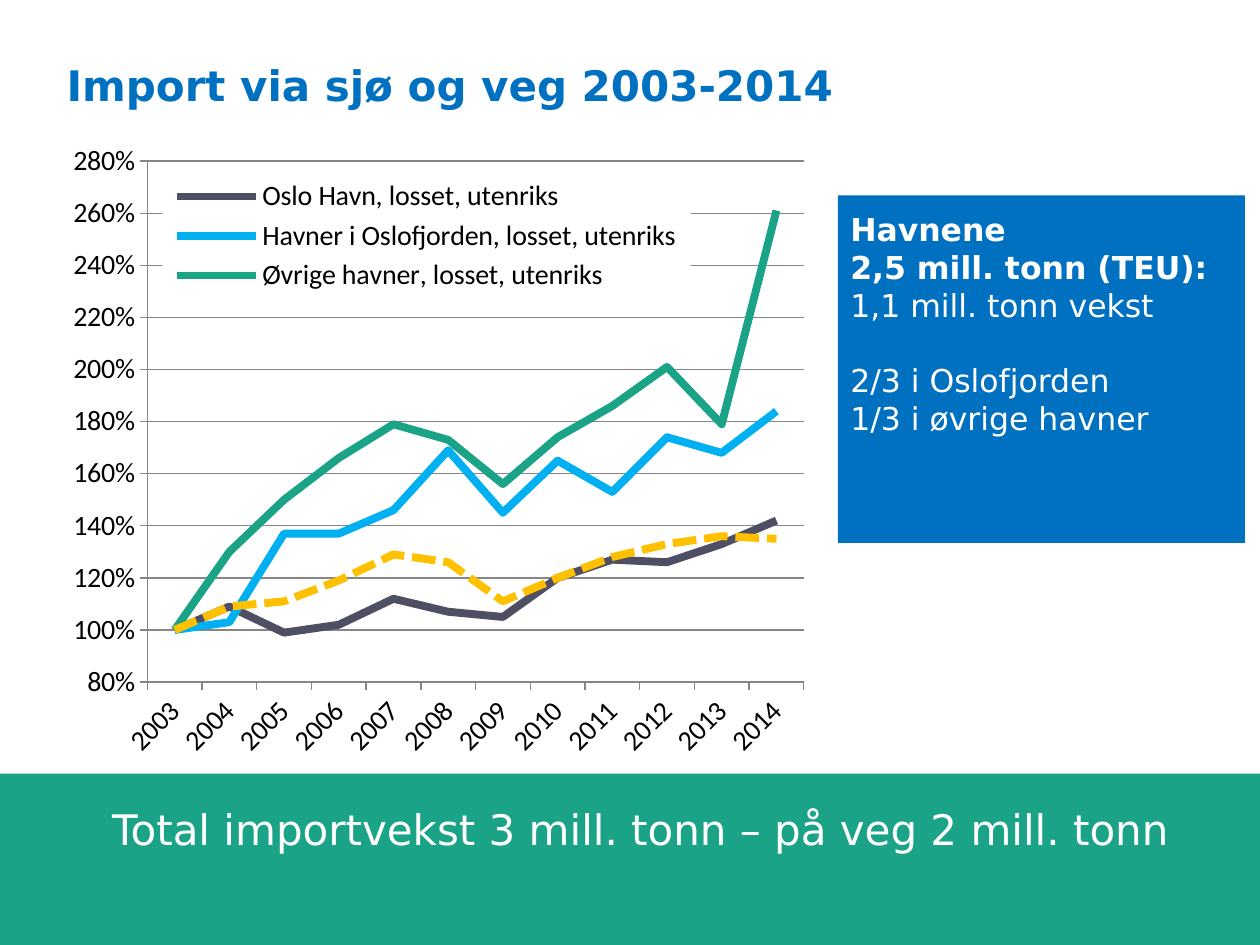
"""Build the slide on imports by sea and road, 2003-2014."""
from pptx import Presentation
from pptx.chart.data import CategoryChartData
from pptx.dml.color import RGBColor
from pptx.enum.chart import XL_CHART_TYPE as ChartType, XL_LEGEND_POSITION as LegendPos
from pptx.enum.chart import XL_MARKER_STYLE as Marker, XL_TICK_MARK as Tick
from pptx.enum.dml import MSO_LINE_DASH_STYLE as Dash
from pptx.enum.shapes import MSO_SHAPE as Shape
from pptx.enum.text import MSO_ANCHOR as Anchor, PP_ALIGN as Align
from pptx.oxml import parse_xml
from pptx.oxml.ns import nsdecls, qn
from pptx.util import Inches, Pt

BLUE = RGBColor(0x00, 0x70, 0xC0)
GREEN = RGBColor(0x1B, 0xA3, 0x87)
SLATE = RGBColor(0x4F, 0x4F, 0x63)
SKY = RGBColor(0x00, 0xB0, 0xF0)
AMBER = RGBColor(0xFF, 0xC0, 0x00)
GREY = RGBColor(0x86, 0x86, 0x86)
BLACK = RGBColor(0, 0, 0)
WHITE = RGBColor(0xFF, 0xFF, 0xFF)

YEARS = [str(year) for year in range(2003, 2015)]
SERIES = [
    ("Oslo Havn, losset, utenriks", SLATE, None,
     [1, 1.09, 0.99, 1.02, 1.12, 1.07, 1.05, 1.2, 1.27, 1.26, 1.33, 1.42]),
    ("Havner i Oslofjorden, losset, utenriks", SKY, None,
     [1, 1.03, 1.37, 1.37, 1.46, 1.69, 1.45, 1.65, 1.53, 1.74, 1.68, 1.84]),
    ("Øvrige havner, losset, utenriks", GREEN, None,
     [1, 1.3, 1.5, 1.66, 1.79, 1.73, 1.56, 1.74, 1.86, 2.01, 1.79, 2.61]),
    ("Import på veg", AMBER, Dash.SQUARE_DOT,
     [1, 1.09, 1.11, 1.19, 1.29, 1.26, 1.11, 1.2, 1.28, 1.33, 1.36, 1.35]),
]


def add_panel(slide, box, color):
    """Add a plain filled rectangle."""
    sp = slide.shapes.add_shape(Shape.RECTANGLE, *map(Inches, box))
    sp.shadow.inherit = False
    sp.fill.solid()
    sp.fill.fore_color.rgb = color
    sp.line.fill.background()


def add_text(slide, box, lines, size, color, align=Align.LEFT, anchor=Anchor.TOP):
    """Add a text box from (text, bold, space before) lines."""
    tf = slide.shapes.add_textbox(*map(Inches, box)).text_frame
    tf.word_wrap = True
    tf.vertical_anchor = anchor
    for i, (text, bold, gap) in enumerate(lines):
        p = tf.add_paragraph() if i else tf.paragraphs[0]
        p.alignment = align
        if gap:
            p.space_before = Pt(gap)
        r = p.add_run()
        r.text = text
        r.font.name = "DejaVu Sans"
        r.font.size = Pt(size)
        r.font.bold = bold
        r.font.color.rgb = color


def set_layout(parent, index, box, inner=False):
    """Place a chart part at fractions of the chart area."""
    for old in parent.findall(qn("c:layout")):
        parent.remove(old)
    target = '<c:layoutTarget val="inner"/>' if inner else ""
    modes = '<c:xMode val="edge"/><c:yMode val="edge"/>'
    sizes = "".join(f'<c:{k} val="{v}"/>' for k, v in zip("xywh", box))
    parent.insert(index, parse_xml(
        f'<c:layout {nsdecls("c")}><c:manualLayout>{target}{modes}{sizes}'
        '</c:manualLayout></c:layout>'))


def style_axes(chart):
    """Set the scale, grid, ticks and slanted year labels."""
    value, category = chart.value_axis, chart.category_axis
    value.minimum_scale, value.maximum_scale, value.major_unit = 0.8, 2.8, 0.2
    value.tick_labels.number_format = "0%"
    value.tick_labels.number_format_is_linked = False
    value.has_major_gridlines = True
    value.major_gridlines.format.line.color.rgb = GREY
    for axis in (value, category):
        axis.major_tick_mark = Tick.OUTSIDE
        axis.minor_tick_mark = Tick.NONE
        axis.format.line.color.rgb = GREY
    category.tick_labels.font.size = Pt(16)
    body = category._element.find(qn("c:txPr")).find(qn("a:bodyPr"))
    body.set("rot", "-2700000")
    body.set("vert", "horz")


def style_legend(chart):
    """Lay a white legend over the plot, without the road series."""
    chart.has_legend = True
    chart.legend.position = LegendPos.RIGHT
    chart.legend.include_in_layout = False
    legend = chart.legend._element
    set_layout(legend, 1, (0.13, 0.07, 0.7, 0.19))
    legend.insert(1, parse_xml(
        f'<c:legendEntry {nsdecls("c")}><c:idx val="{len(SERIES) - 1}"/>'
        '<c:delete val="1"/></c:legendEntry>'))
    legend.find(qn("c:overlay")).addnext(parse_xml(
        f'<c:spPr {nsdecls("c", "a")}><a:solidFill><a:srgbClr val="{WHITE}"/>'
        '</a:solidFill></c:spPr>'))


def add_line_chart(slide, box):
    """Add the import index chart."""
    data = CategoryChartData(number_format="0%")
    data.categories = YEARS
    for name, _, _, values in SERIES:
        data.add_series(name, values)
    chart = slide.shapes.add_chart(ChartType.LINE, *map(Inches, box), data).chart
    chart.has_title = False
    chart.font.name = "Calibri"
    chart.font.size = Pt(16)
    chart.font.color.rgb = BLACK
    chart.plots[0].vary_by_categories = False
    for series, (_, color, dash, _) in zip(chart.plots[0].series, SERIES):
        series.smooth = False
        series.marker.style = Marker.NONE
        line = series.format.line
        line.color.rgb = color
        line.width = Pt(4.5)
        if dash:
            line.dash_style = dash
    style_axes(chart)
    style_legend(chart)
    plot_area = chart._chartSpace.chart.plotArea
    set_layout(plot_area, 0, (0.11, 0.05, 0.87, 0.8), inner=True)


def main():
    """Build and save the slide."""
    prs = Presentation()
    prs.slide_width, prs.slide_height = Inches(10), Inches(7.5)
    s = prs.slides.add_slide(prs.slide_layouts[6])
    add_text(s, (0.43, 0.05, 9, 1.25), [("Import via sjø og veg 2003-2014", True, 0)],
             24, BLUE, anchor=Anchor.MIDDLE)
    add_panel(s, (6.65, 1.55, 3.23, 2.76), BLUE)
    add_text(s, (6.65, 1.62, 3.23, 2.22), [
        ("Havnene", True, 0),
        ("2,5 mill. tonn (TEU):", True, 0),
        ("1,1 mill. tonn vekst", False, 0),
        ("2/3 i Oslofjorden", False, 21.5),
        ("1/3 i øvrige havner", False, 0),
    ], 18, WHITE)
    add_panel(s, (0, 6.14, 10, 1.36), GREEN)
    add_text(s, (0.52, 6.33, 9.13, 0.5),
             [("Total importvekst 3 mill. tonn – på veg 2 mill. tonn", False, 0)],
             24, WHITE, Align.CENTER)
    add_line_chart(s, (0.51, 1.02, 5.99, 5.17))
    prs.save("out.pptx")


if __name__ == "__main__":
    main()
